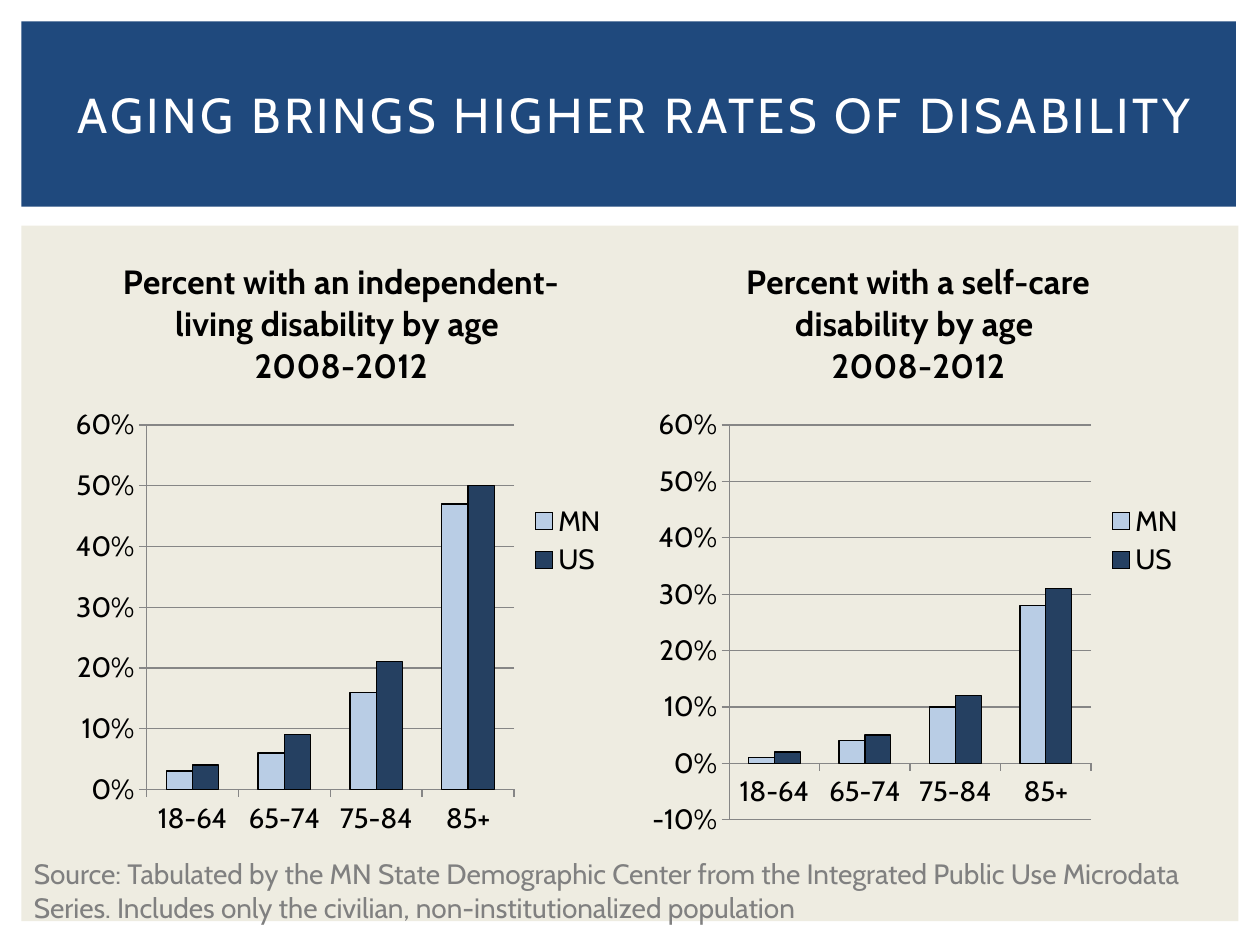
from dataclasses import dataclass
from lxml import etree
from pptx import Presentation
from pptx import util as u
from pptx.chart.data import CategoryChartData
from pptx.dml.color import RGBColor
from pptx.enum import chart as ch, shapes, text
from pptx.oxml import ns


@dataclass(frozen=True)
class Theme:
    font: str = "Cabin"
    navy: str = "1F497D"
    sand: str = "EEECE1"
    white: str = "FFFFFF"
    black: str = "000000"
    gray: str = "808080"
    axis: str = "868686"
    bars: tuple = ("B9CDE5", "254061")
    title_size: float = 28
    chart_title_size: float = 19.2
    body_size: float = 16
    tracking: int = 200
    hairline: float = 0.75


def apply(target, **values):
    for name, value in values.items():
        setattr(target, name, value)


class SlideBuilder:
    columns, rows = 100, 75

    def __init__(self, theme):
        self.theme = theme
        self.deck = Presentation()
        apply(self.deck, slide_width=u.Inches(10), slide_height=u.Inches(7.5))
        self.page = self.deck.slides.add_slide(self.deck.slide_layouts[5])

    def frame(self, left, top, width, height):
        column = self.deck.slide_width / self.columns
        row = self.deck.slide_height / self.rows
        return [round(n * unit) for n, unit in
                zip((left, top, width, height), (column, row, column, row))]

    def style_font(self, font, size, color, bold=False):
        apply(font, name=self.theme.font, size=u.Pt(size), bold=bold)
        font.color.rgb = RGBColor.from_string(color)

    def style_line(self, line, color):
        line.width = u.Pt(self.theme.hairline)
        line.color.rgb = RGBColor.from_string(color)

    def panel(self, place, color):
        box = self.page.shapes.add_shape(shapes.MSO_SHAPE.RECTANGLE, *self.frame(*place))
        box.shadow.inherit = False
        box.fill.solid()
        box.fill.fore_color.rgb = RGBColor.from_string(color)
        box.line.fill.background()
        self.page.shapes.title.element.addprevious(box.element)

    def title(self, place, words):
        box = self.page.shapes.title
        apply(box, **dict(zip(("left", "top", "width", "height"), self.frame(*place))))
        apply(box.text_frame, word_wrap=True, auto_size=text.MSO_AUTO_SIZE.NONE,
              vertical_anchor=text.MSO_ANCHOR.MIDDLE)
        para = box.text_frame.paragraphs[0]
        para.alignment = text.PP_ALIGN.CENTER
        span = para.add_run()
        span.text = words
        self.style_font(span.font, self.theme.title_size, self.theme.white)
        span.font._element.set("spc", str(self.theme.tracking))

    def note(self, place, words):
        box = self.page.shapes.add_textbox(*self.frame(*place))
        apply(box.text_frame, word_wrap=True,
              auto_size=text.MSO_AUTO_SIZE.SHAPE_TO_FIT_TEXT)
        span = box.text_frame.paragraphs[0].add_run()
        span.text = words
        self.style_font(span.font, self.theme.body_size, self.theme.gray)

    def column_chart(self, place, heading, categories, series, plot_area, low):
        data = CategoryChartData(number_format="0%")
        data.categories = categories
        for name, values in series.items():
            data.add_series(name, values)
        chart = self.page.shapes.add_chart(
            ch.XL_CHART_TYPE.COLUMN_CLUSTERED, *self.frame(*place), data).chart
        self.style_font(chart.font, self.theme.body_size, self.theme.black)

        apply(chart, has_title=True, has_legend=True)
        frame = chart.chart_title.text_frame
        frame.text = "\n".join(heading)
        for para in frame.paragraphs:
            for span in para.runs:
                self.style_font(span.font, self.theme.chart_title_size,
                                self.theme.black, bold=True)
        apply(chart.legend, position=ch.XL_LEGEND_POSITION.RIGHT, include_in_layout=False)

        plot = chart.plots[0]
        apply(plot, gap_width=150, overlap=0, vary_by_categories=False)
        for bars, color in zip(plot.series, self.theme.bars):
            bars.format.fill.solid()
            bars.format.fill.fore_color.rgb = RGBColor.from_string(color)
            self.style_line(bars.format.line, self.theme.black)

        for axis in (chart.category_axis, chart.value_axis):
            apply(axis, major_tick_mark=ch.XL_TICK_MARK.OUTSIDE,
                  minor_tick_mark=ch.XL_TICK_MARK.NONE)
            self.style_line(axis.format.line, self.theme.axis)
        value_axis = chart.value_axis
        apply(value_axis, minimum_scale=low, maximum_scale=0.6, major_unit=0.1,
              has_major_gridlines=True)
        apply(value_axis.tick_labels, number_format="0%", number_format_is_linked=False)
        self.style_line(value_axis.major_gridlines.format.line, self.theme.axis)
        self.place_plot(chart, plot_area)

    def place_plot(self, chart, plot_area):
        area = chart.element.find(".//" + ns.qn("c:plotArea"))
        for old in area.findall(ns.qn("c:layout")):
            area.remove(old)
        layout = etree.Element(ns.qn("c:layout"))
        manual = etree.SubElement(layout, ns.qn("c:manualLayout"))
        settings = [("layoutTarget", "inner"), ("xMode", "edge"), ("yMode", "edge")]
        for tag, value in settings + list(zip("xywh", plot_area)):
            etree.SubElement(manual, ns.qn("c:" + tag)).set("val", str(value))
        area.insert(0, layout)


def main():
    theme = Theme()
    slide = SlideBuilder(theme)
    slide.panel((1.7, 17.9, 96.6, 55.2), theme.sand)
    slide.panel((1.7, 1.7, 96.4, 14.7), theme.navy)
    slide.title((4.5, 3.3, 91.7, 11.5), "AGING BRINGS HIGHER RATES OF DISABILITY")
    slide.note((1.7, 67.5, 97.2, 6.4),
               "Source: Tabulated by the MN State Demographic Center from the "
               "Integrated Public Use Microdata Series. Includes only the civilian, "
               "non-institutionalized population")

    ages = ["18-64", "65-74", "75-84", "85+"]
    charts = [
        ("Percent with an independent-living disability by age ",
         {"MN": (0.03, 0.06, 0.16, 0.47), "US": (0.04, 0.09, 0.21, 0.5)},
         (0.15, 0.31, 0.66, 0.6), 0),
        ("Percent with a self-care disability by age ",
         {"MN": (0.01, 0.04, 0.1, 0.28), "US": (0.02, 0.05, 0.12, 0.31)},
         (0.16, 0.31, 0.65, 0.65), -0.1),
    ]
    width, gap, margin = 44.2, 1.6, 5
    for index, (heading, series, plot_area, low) in enumerate(charts):
        slide.column_chart((margin + index * (width + gap), 18.8, width, 48.2),
                           (heading, "2008-2012"), ages, series, plot_area, low)
    slide.deck.save("out.pptx")


if __name__ == "__main__":
    main()
